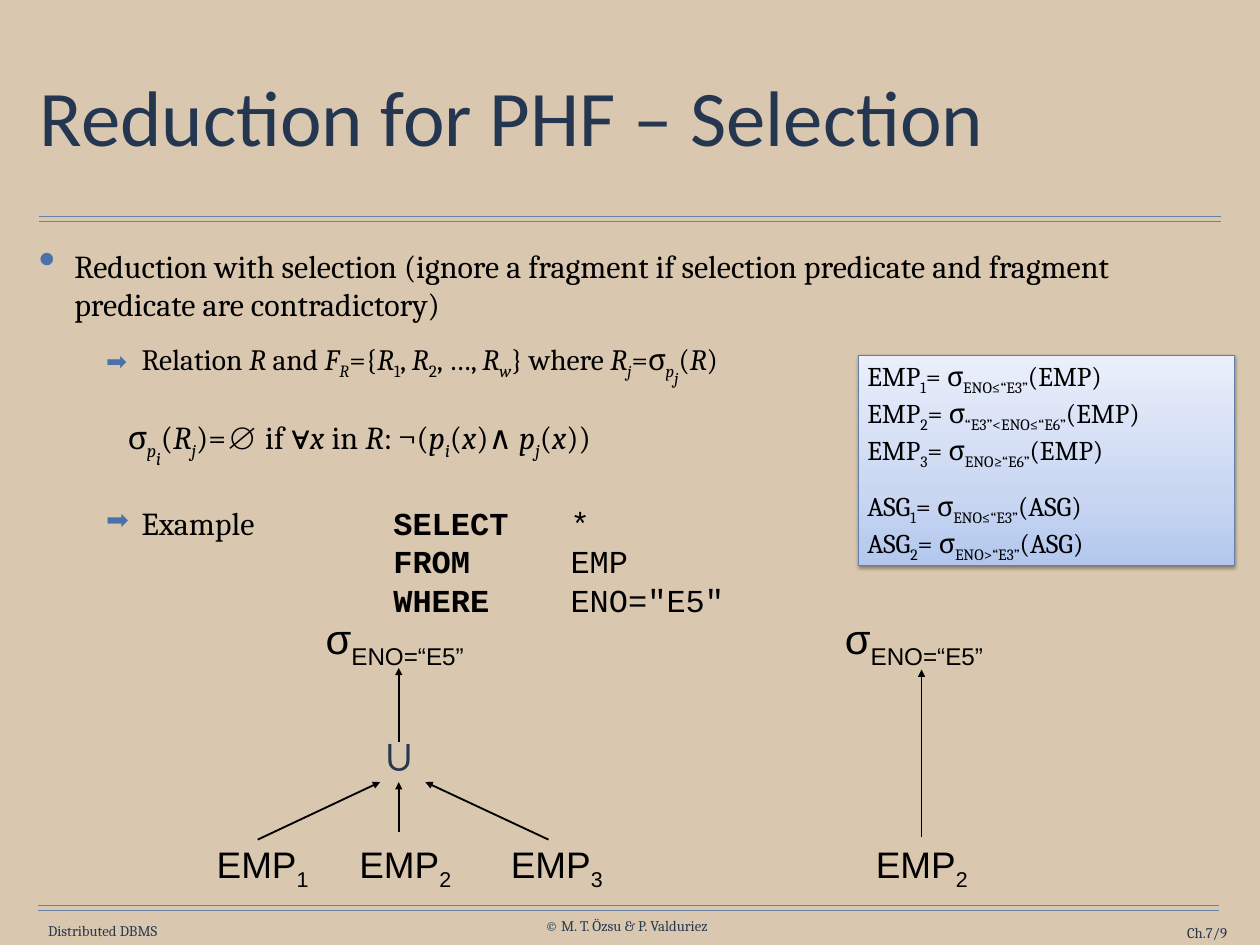
"""Builds the slide on reducing horizontally fragmented relations by selection."""
from dataclasses import dataclass, field

from lxml import etree
from pptx import Presentation
from pptx.dml.color import RGBColor
from pptx.enum.shapes import MSO_CONNECTOR, MSO_SHAPE
from pptx.enum.text import MSO_ANCHOR, PP_ALIGN
from pptx.oxml import parse_xml
from pptx.oxml.ns import qn
from pptx.util import Emu, Inches, Pt

STRAIGHT, RECTANGLE = MSO_CONNECTOR.STRAIGHT, MSO_SHAPE.RECTANGLE
TOP, MIDDLE = MSO_ANCHOR.TOP, MSO_ANCHOR.MIDDLE
LEFT, CENTER, RIGHT = PP_ALIGN.LEFT, PP_ALIGN.CENTER, PP_ALIGN.RIGHT
WIDTH, HEIGHT = Inches(14.22), Inches(10.67)
BLACK, NAVY, TITLE_INK, RULE, BULLET = "000000", "263750", "253750", "6682AA", "4A71A9"
DRAWING_NS = "http://schemas.openxmlformats.org/drawingml/2006/main"


@dataclass
class Para:
    text: str
    size: float
    font: str = "Cambria"
    color: str = BLACK
    fmt: dict = field(default_factory=dict)
    margin: float = 0
    hang: float = 0
    bullet: str = ""
    bullet_pct: int = 100
    tabs: tuple = ()


@dataclass
class Box:
    left: float
    top: float
    width: float
    height: float
    paras: list
    inset: tuple = (0, 0)
    anchor: MSO_ANCHOR = TOP
    wrap: bool = False


@dataclass
class Line:
    x1: float
    y1: float
    x2: float
    y2: float
    color: str = BLACK
    weight: float = 1.5
    arrow: bool = True


def rgb(value: str) -> RGBColor:
    return RGBColor.from_string(value)


def col(share: float) -> Emu:
    return Emu(round(WIDTH * share / 100))


def row(share: float) -> Emu:
    return Emu(round(HEIGHT * share / 100))


def add_child(parent, tag: str, **attrs):
    return etree.SubElement(parent, qn(tag), {k: str(v) for k, v in attrs.items()})


def write_segment(p, segment: str, para: Para) -> None:
    flags, mark, text = segment.rpartition("~")
    for i, part in enumerate(text.split("\n")):
        if i:
            p.add_line_break()
        if not part:
            continue
        r = p.add_run()
        r.text = part
        r.font.color.rgb = rgb(para.color)
        values = {"size": Pt(para.size), "bold": "b" in flags, "italic": "i" in flags,
                  "name": "Courier New" if "c" in flags else para.font}
        for name, value in values.items():
            setattr(r.font, name, value)
        if "s" in flags:
            r.font._element.set("baseline", str(-25000 * flags.count("s")))


def write_para(p, para: Para) -> None:
    pPr = p._p.get_or_add_pPr()
    pPr.set("marL", str(Inches(para.margin)))
    pPr.set("indent", str(Inches(-para.hang)))
    if para.bullet:
        add_child(add_child(pPr, "a:buClr"), "a:srgbClr", val=BULLET)
        add_child(pPr, "a:buSzPct", val=para.bullet_pct * 1000)
        add_child(pPr, "a:buChar", char=para.bullet)
    if para.tabs:
        stops = add_child(pPr, "a:tabLst")
        for pos in para.tabs:
            add_child(stops, "a:tab", pos=Inches(pos), algn="l")
    for name, value in {"alignment": LEFT, **para.fmt}.items():
        setattr(p, name, value)
    for segment in para.text.split("|"):
        write_segment(p, segment, para)


def fill_text(tf, box: Box) -> None:
    side, edge = (Inches(v) for v in box.inset)
    values = {"margin_left": side, "margin_right": side, "margin_top": edge,
              "margin_bottom": edge, "vertical_anchor": box.anchor, "word_wrap": box.wrap}
    for name, value in values.items():
        setattr(tf, name, value)
    for i, para in enumerate(box.paras):
        write_para(tf.add_paragraph() if i else tf.paragraphs[0], para)


def place(box: Box) -> tuple:
    return col(box.left), row(box.top), col(box.width), row(box.height)


def draw_box(s, box: Box) -> None:
    fill_text(s.shapes.add_textbox(*place(box)).text_frame, box)


def draw_line(s, line: Line) -> None:
    c = s.shapes.add_connector(STRAIGHT, col(line.x1), row(line.y1), col(line.x2), row(line.y2))
    c.line.color.rgb = rgb(line.color)
    c.line.width = Pt(line.weight)
    if line.arrow:
        add_child(c.line._get_or_add_ln(), "a:tailEnd", type="triangle")
    add_child(c._element.spPr, "a:effectLst")


def draw_panel(s, box: Box) -> None:
    sp = s.shapes.add_shape(RECTANGLE, *place(box))
    stops = "".join(f'<a:gs pos="{pos}000"><a:srgbClr val="{color}"/></a:gs>'
                    for pos, color in ((0, "B3C7EE"), (35, "CAD7F2"), (100, "EAEFFB")))
    sp._element.spPr.insert(2, parse_xml(
        f'<a:gradFill xmlns:a="{DRAWING_NS}" rotWithShape="1"><a:gsLst>{stops}</a:gsLst>'
        '<a:lin ang="16200000" scaled="0"/></a:gradFill>'))
    sp.line.color.rgb = rgb("627FA8")
    sp.line.width = Pt(0.75)
    sp.shadow.inherit = False
    shadow = add_child(sp._element.spPr.find(qn("a:effectLst")), "a:outerShdw", blurRad=Pt(3.1),
                       dist=Pt(1.6), dir=5400000, rotWithShape=0)
    add_child(add_child(shadow, "a:srgbClr", val=BLACK), "a:alpha", val=38000)
    fill_text(sp.text_frame, box)


def footer(left: float, top: float, width: float, text: str, align: PP_ALIGN) -> Box:
    para = Para(text, 12, color=NAVY, fmt={"alignment": align})
    return Box(left, top, width, 1.87, [para], anchor=MIDDLE)


def node(left: float, top: float, width: float, height: float, text: str, size: float) -> Box:
    para = Para(text, size, "Arial", fmt={"alignment": CENTER})
    return Box(left, top, width, height, [para], (0.14, 0.07))


BODY = [
    Para("Reduction with selection (ignore a fragment if selection predicate and fragment "
         "predicate are contradictory)", 26, margin=0.4, hang=0.4, bullet="•", bullet_pct=150),
    Para("Relation |i~R| and |i~F|is~R|={|i~R|s~1|, |i~R|s~2|, …, |i~R|is~w|} where "
         "|i~R|is~j|=σ|is~p|iss~j|(|i~R|)", 24, fmt={"space_before": Pt(14.4)},
         margin=1.16, hang=0.4, bullet="➡", bullet_pct=85),
    Para("σ|is~p|iss~i|(|i~R|is~j|)=∅ if ∀|i~x |in |i~R|: ¬(|i~p|is~i|(|i~x|)∧ "
         "|i~p|is~j|(|i~x|))", 26, fmt={"space_before": Pt(24), "space_after": Pt(12)}, margin=1),
    Para("Example\t\t|cb~SELECT|c~\t*\n\t\t|cb~FROM|c~\t\tEMP\n\t\t|cb~WHERE|c~\tENO=\"E5\"", 26,
         fmt={"space_before": Pt(15.6)}, margin=1.16, hang=0.4, bullet="➡", bullet_pct=85,
         tabs=(3.56, 4, 5, 6)),
]
FRAGMENTS = [
    Para("EMP|s~1|= σ|s~ENO≤“E3”|(EMP)\nEMP|s~2|= σ|s~“E3”<ENO≤“E6”|(EMP)\n"
         "EMP|s~3|= σ|s~ENO≥“E6”|(EMP)", 22),
    Para("ASG|s~1|= σ|s~ENO≤“E3”|(ASG)\nASG|s~2|= σ|s~ENO>“E3”|(ASG)", 22,
         fmt={"space_before": Pt(16)}),
]
UNION = Para("∪", 36, "Arial", NAVY, {"alignment": CENTER, "line_spacing": Pt(41.2)})
TITLE = Para("Reduction for PHF – Selection", 64, "Calibri", TITLE_INK, {"line_spacing": 0.9})
BOXES = [
    footer(3.31, 97.56, 9.7, "Distributed DBMS", CENTER),
    footer(42.41, 97, 14.63, "© M. T. Özsu & P. Valduriez", CENTER),
    footer(86.57, 97.75, 10.83, "Ch.7/9", RIGHT),
    Box(2.74, 4.59, 94.51, 16.49, [TITLE], (0.06, 0.06), MIDDLE, True),
    Box(2.67, 25.49, 94.51, 69.35, BODY, (0.06, 0.06), TOP, True),
    *(node(x, 64.2, 13.15, 6.65, "σ|s~ENO=“E5” ", 34) for x in (24.75, 65.96)),
    *(node(x, 88.38, 9.49, 6, f"EMP|s~{n}", 30)
      for x, n in ((16.1, 1), (27.43, 2), (39.45, 3), (68.42, 2))),
    Box(30.31, 77.23, 2.74, 5.44, [UNION]),
]
PANEL = Box(68.14, 37.58, 29.82, 22.21, FRAGMENTS, (0.1, 0.05), TOP, True)
LINES = [
    *(Line(x1, y + gap, x2, y + gap, RULE, 1, False)
      for x1, x2, y in ((3.09, 96.91, 22.87), (3.02, 96.77, 95.78)) for gap in (0, 0.56)),
    Line(31.65, 78.54, 31.65, 70.67),
    Line(31.65, 88, 31.65, 82.76),
    Line(20.46, 88.85, 30.17, 82.76),
    Line(43.53, 88.85, 33.76, 82.76),
    Line(73.14, 88.57, 73.14, 70.85),
]


def main() -> None:
    prs = Presentation()
    prs.slide_width, prs.slide_height = WIDTH, HEIGHT
    s = prs.slides.add_slide(prs.slide_layouts[6])
    s.background.fill.solid()
    s.background.fill.fore_color.rgb = rgb("D9C8AF")
    for line in LINES:
        draw_line(s, line)
    for box in BOXES:
        draw_box(s, box)
    draw_panel(s, PANEL)
    prs.save("out.pptx")


if __name__ == "__main__":
    main()
